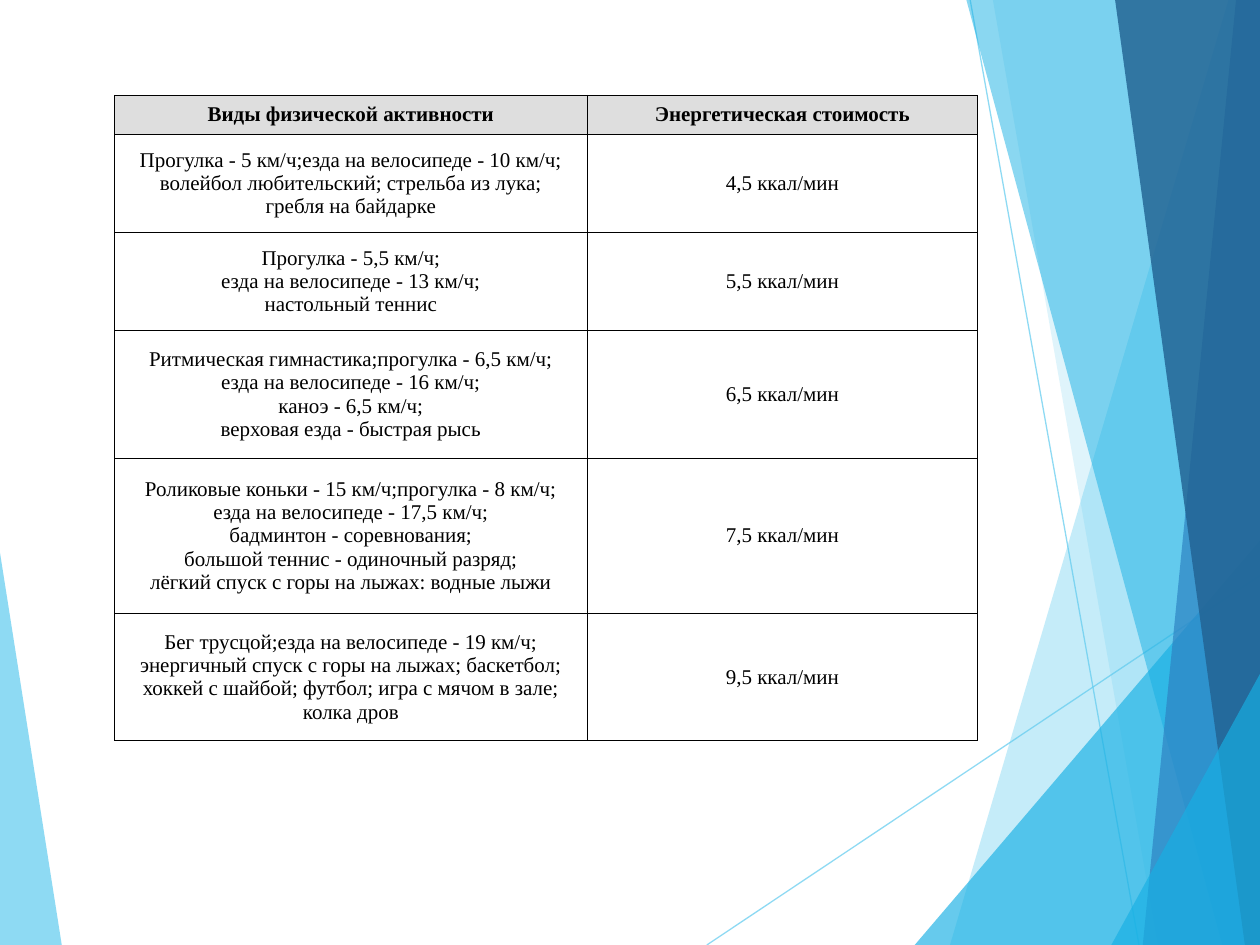
from lxml import etree
from pptx import Presentation
from pptx.dml.color import RGBColor
from pptx.enum.shapes import MSO_CONNECTOR
from pptx.enum.text import MSO_ANCHOR, PP_ALIGN
from pptx.oxml.ns import qn
from pptx.util import Inches, Pt

STRAIGHT = MSO_CONNECTOR.STRAIGHT
MIDDLE = MSO_ANCHOR.MIDDLE
CENTER = PP_ALIGN.CENTER

BLACK = RGBColor(0x00, 0x00, 0x00)
WHITE = RGBColor(0xFF, 0xFF, 0xFF)
GREY = RGBColor(0xDE, 0xDE, 0xDE)
SKY = RGBColor(0x5F, 0xCB, 0xEF)
CYAN = RGBColor(0x17, 0xB0, 0xE4)
BLUE = RGBColor(0x2E, 0x83, 0xC3)
NAVY = RGBColor(0x22, 0x62, 0x92)

LEFT = ([(0, 58.5), (4.9, 100), (0, 100)], SKY, 70)
RAYS = [(56.1, 100, 100, 60.9), (77, 0, 90.4, 100)]
FACETS = [
    ([(97.5, 0), (75.4, 100), (100, 100), (100, 0)], SKY, 36),
    ([(78.8, 0), (91.9, 100), (100, 100), (100, 0)], SKY, 20),
    ([(72.6, 100), (100, 57.2), (100, 100)], CYAN, 66),
    ([(76.7, 0), (97, 100), (100, 100), (100, 0)], CYAN, 50),
    ([(98.1, 0), (90.7, 100), (100, 100), (100, 0)], BLUE, 70),
    ([(88.5, 0), (98.8, 100), (100, 100), (100, 0)], NAVY, 82),
    ([(88.2, 100), (100, 71.3), (100, 100)], CYAN, 66),
]
COLS = [37.5, 31]
ROWS = [4.1, 10.4, 10.4, 13.5, 16.4, 13.5]
DATA = [
    ("Виды физической активности", "Энергетическая стоимость"),
    ("Прогулка - 5 км/ч;езда на велосипеде - 10 км/ч; волейбол любительский; стрельба из лука;\n"
     "гребля на байдарке", "4,5 ккал/мин"),
    ("Прогулка - 5,5 км/ч;\nезда на велосипеде - 13 км/ч;\nнастольный теннис", "5,5 ккал/мин"),
    ("Ритмическая гимнастика;прогулка - 6,5 км/ч;\nезда на велосипеде - 16 км/ч;\n"
     "каноэ - 6,5 км/ч;\nверховая езда - быстрая рысь", "6,5 ккал/мин"),
    ("Роликовые коньки - 15 км/ч;прогулка - 8 км/ч;\nезда на велосипеде - 17,5 км/ч;\n"
     "бадминтон - соревнования;\nбольшой теннис - одиночный разряд;\n"
     "лёгкий спуск с горы на лыжах: водные лыжи", "7,5 ккал/мин"),
    ("Бег трусцой;езда на велосипеде - 19 км/ч;\n"
     "энергичный спуск с горы на лыжах; баскетбол; хоккей с шайбой; футбол; игра с мячом в зале;\n"
     "колка дров", "9,5 ккал/мин"),
]


class Deck:
    """Draws styled elements on one slide, with lengths in percent of its size."""

    font = "Times New Roman"
    size = Pt(12)
    inset = Inches(0.04)
    stroke = Pt(0.75)

    def __init__(self):
        self.prs = Presentation()
        self.prs.slide_width = Inches(10)
        self.prs.slide_height = Inches(7.5)
        self.slide = self.prs.slides.add_slide(self.prs.slide_layouts[6])
        self.shapes = self.slide.shapes

    def wide(self, share):
        return round(self.prs.slide_width * share / 100)

    def high(self, share):
        return round(self.prs.slide_height * share / 100)

    def fade(self, fill, color, alpha):
        fill.solid()
        fill.fore_color.rgb = color
        tint = fill._xPr.find(qn("a:solidFill"))[0]
        etree.SubElement(tint, qn("a:alpha")).set("val", str(alpha * 1000))

    def facet(self, points, color, alpha):
        spots = [(self.wide(x), self.high(y)) for x, y in points]
        path = self.shapes.build_freeform(*spots[0])
        path.add_line_segments(spots[1:], close=True)
        shape = path.convert_to_shape()
        shape.shadow.inherit = False
        shape.line.fill.background()
        self.fade(shape.fill, color, alpha)

    def ray(self, x1, y1, x2, y2):
        line = self.shapes.add_connector(
            STRAIGHT, self.wide(x1), self.high(y1), self.wide(x2), self.high(y2))
        line.line.width = self.stroke
        self.fade(line.line.fill, SKY, 70)
        etree.SubElement(line._element.spPr, qn("a:effectLst"))

    def edge(self, cell):
        props = cell._tc.get_or_add_tcPr()
        for side in ("lnL", "lnR", "lnT", "lnB"):
            line = etree.SubElement(props, qn(f"a:{side}"), w=str(self.stroke))
            fill = etree.SubElement(line, qn("a:solidFill"))
            etree.SubElement(fill, qn("a:srgbClr"), val=str(BLACK))

    def cell(self, cell, text, head):
        self.edge(cell)
        cell.fill.solid()
        cell.fill.fore_color.rgb = GREY if head else WHITE
        cell.vertical_anchor = MIDDLE
        cell.margin_left = cell.margin_right = self.inset
        cell.margin_top = cell.margin_bottom = self.inset
        cell.text = text
        for para in cell.text_frame.paragraphs:
            para.alignment = CENTER
            para.font.name = self.font
            para.font.size = self.size
            para.font.bold = head
            para.font.color.rgb = BLACK

    def table(self, left, top, cols, rows, data):
        frame = self.shapes.add_table(
            len(rows), len(cols), self.wide(left), self.high(top),
            self.wide(sum(cols)), self.high(sum(rows)))
        table = frame.table
        for col, share in zip(table.columns, cols):
            col.width = self.wide(share)
        for row, share in zip(table.rows, rows):
            row.height = self.high(share)
        for r, texts in enumerate(data):
            for c, text in enumerate(texts):
                self.cell(table.cell(r, c), text, r == 0)


def main():
    deck = Deck()
    deck.facet(*LEFT)
    for ray in RAYS:
        deck.ray(*ray)
    for facet in FACETS:
        deck.facet(*facet)
    deck.table(9.1, 10.1, COLS, ROWS, DATA)
    deck.prs.save("out.pptx")


if __name__ == "__main__":
    main()
